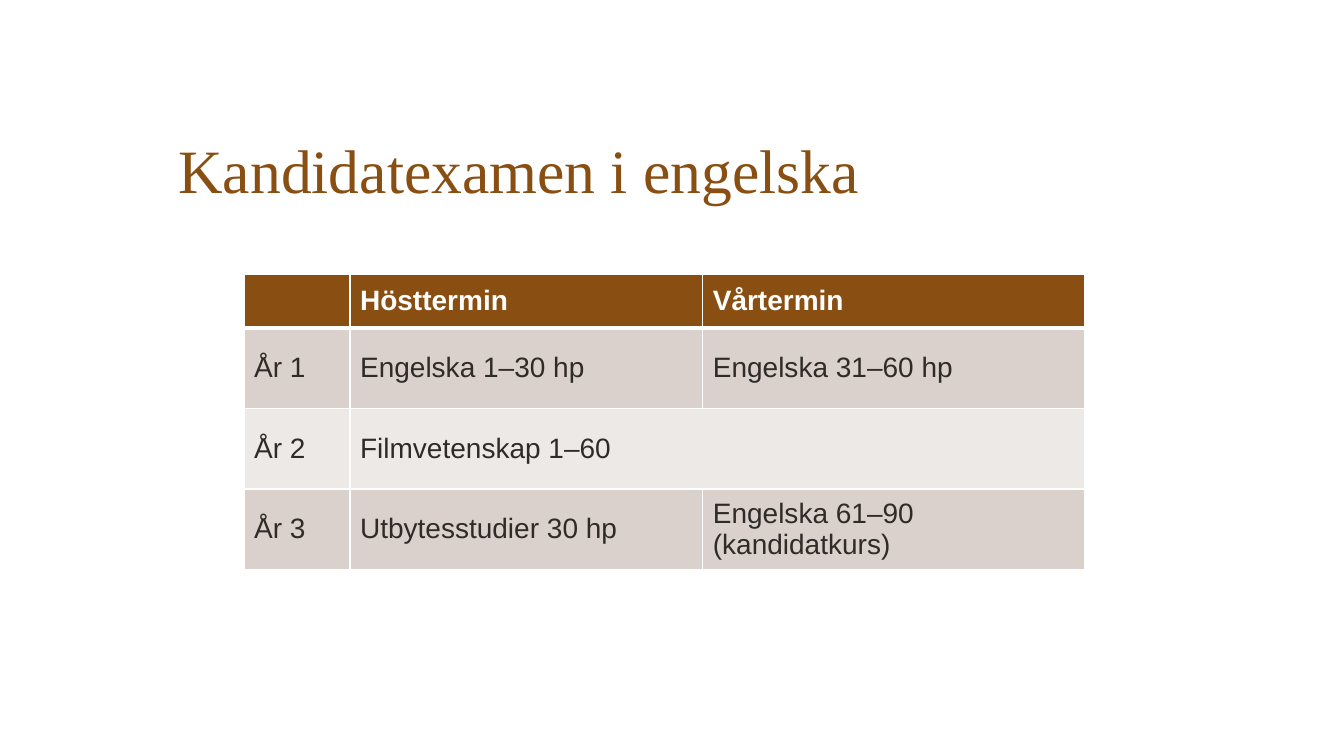
from lxml.etree import SubElement
from pptx import Presentation
from pptx.dml.color import RGBColor
from pptx.enum.text import MSO_ANCHOR
from pptx.oxml.ns import qn
from pptx.util import Cm, Pt

COLORS = {
    "brown": "894E11",
    "text": "2F2B28",
    "white": "FFFFFF",
    "dark_band": "DAD0CC",
    "light_band": "EDE9E7",
}
COLUMN_WIDTHS = [2.67, 8.89, 9.63]
ROW_HEIGHTS = [1.35, 2.03, 2.03, 2.03]
TERMS = [
    ["", "Hösttermin", "Vårtermin"],
    ["År 1", "Engelska 1–30 hp", "Engelska 31–60 hp"],
    ["År 2", "Filmvetenskap 1–60", ""],
    ["År 3", "Utbytesstudier 30 hp", "Engelska 61–90 (kandidatkurs)"],
]


def write_text(text_frame, text, font="Arial", size=20, color="text", bold=False, spacing=None):
    paragraph = text_frame.paragraphs[0]
    paragraph.line_spacing = spacing
    paragraph.font.size = Pt(size)
    if not text:
        return
    run = paragraph.add_run()
    run.text = text
    run.font.name = font
    run.font.size = Pt(size)
    run.font.bold = bold
    run.font.color.rgb = RGBColor.from_string(COLORS[color])


def set_borders(cell, **widths):
    properties = cell._tc.get_or_add_tcPr()
    for side, width in widths.items():
        line = SubElement(properties, qn(f"a:ln{side}"), w=str(Pt(width)))
        fill = SubElement(line, qn("a:solidFill"))
        SubElement(fill, qn("a:srgbClr"), val=COLORS["white"])


def add_title(slide, left, top, width, height):
    shape = slide.shapes.add_textbox(Cm(left), Cm(top), Cm(width), Cm(height))
    text_frame = shape.text_frame
    text_frame.word_wrap = True
    text_frame.vertical_anchor = MSO_ANCHOR.BOTTOM
    text_frame.margin_left = text_frame.margin_top = text_frame.margin_right = 0
    text_frame.margin_bottom = Cm(0.79)
    write_text(text_frame, "Kandidatexamen i engelska", font="Times New Roman",
               size=44, color="brown", spacing=0.9)


def add_term_table(slide, left, top, width, height):
    table = slide.shapes.add_table(len(TERMS), len(TERMS[0]), Cm(left), Cm(top),
                                   Cm(width), Cm(height)).table
    for column, share in zip(table.columns, COLUMN_WIDTHS):
        column.width = Cm(width * share / sum(COLUMN_WIDTHS))
    for row, share in zip(table.rows, ROW_HEIGHTS):
        row.height = Cm(height * share / sum(ROW_HEIGHTS))
    for row_index, texts in enumerate(TERMS):
        header = row_index == 0
        band = "brown" if header else "dark_band" if row_index % 2 else "light_band"
        for column_index, text in enumerate(texts):
            cell = table.cell(row_index, column_index)
            set_borders(cell, L=1, R=1, T=3 if row_index == 1 else 1, B=3 if header else 1)
            cell.fill.solid()
            cell.fill.fore_color.rgb = RGBColor.from_string(COLORS[band])
            cell.vertical_anchor = MSO_ANCHOR.MIDDLE
            write_text(cell.text_frame, text, color="white" if header else "text", bold=header)
    table.cell(2, 1).merge(table.cell(2, 2))


def main():
    presentation = Presentation()
    presentation.slide_width = Cm(33.87)
    presentation.slide_height = Cm(19.05)
    slide = presentation.slides.add_slide(presentation.slide_layouts[6])
    add_title(slide, 4.5, 1, 24.5, 5)
    add_term_table(slide, 6.15, 6.91, 21.19, 7.44)
    presentation.save("out.pptx")


if __name__ == "__main__":
    main()
